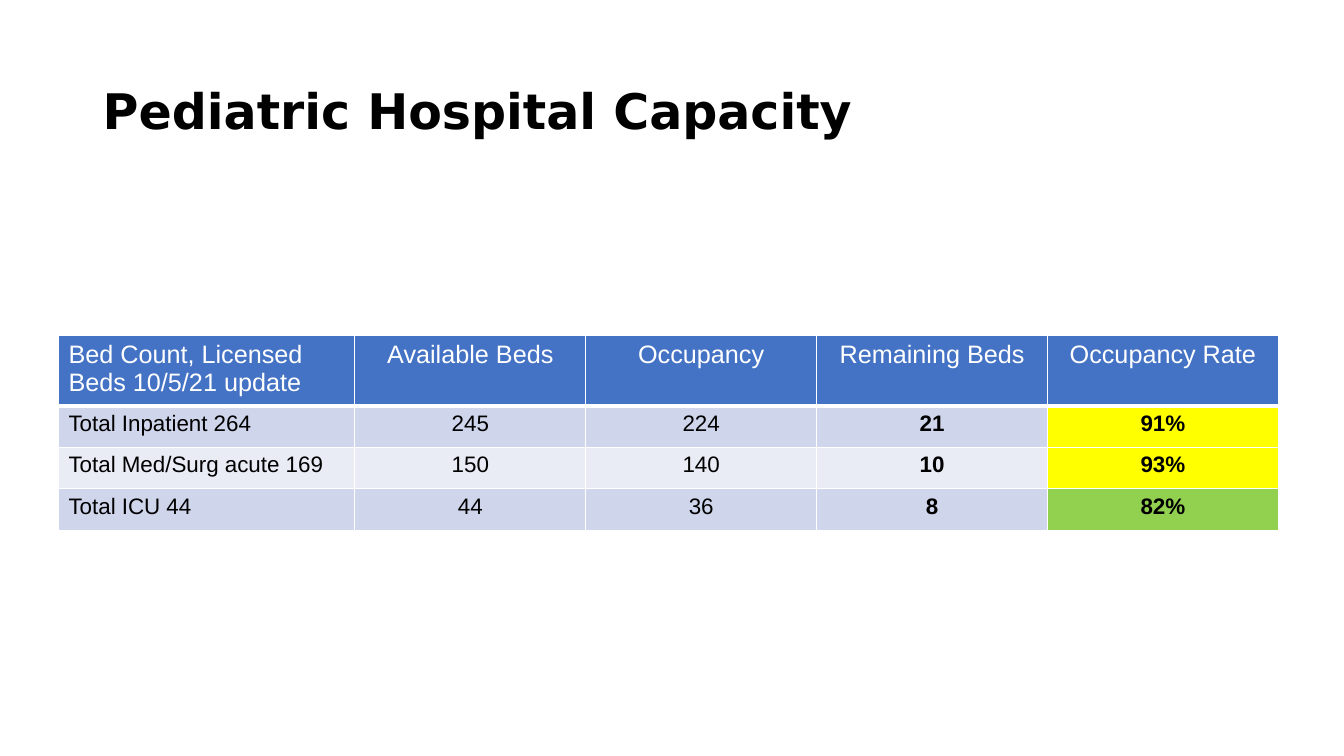
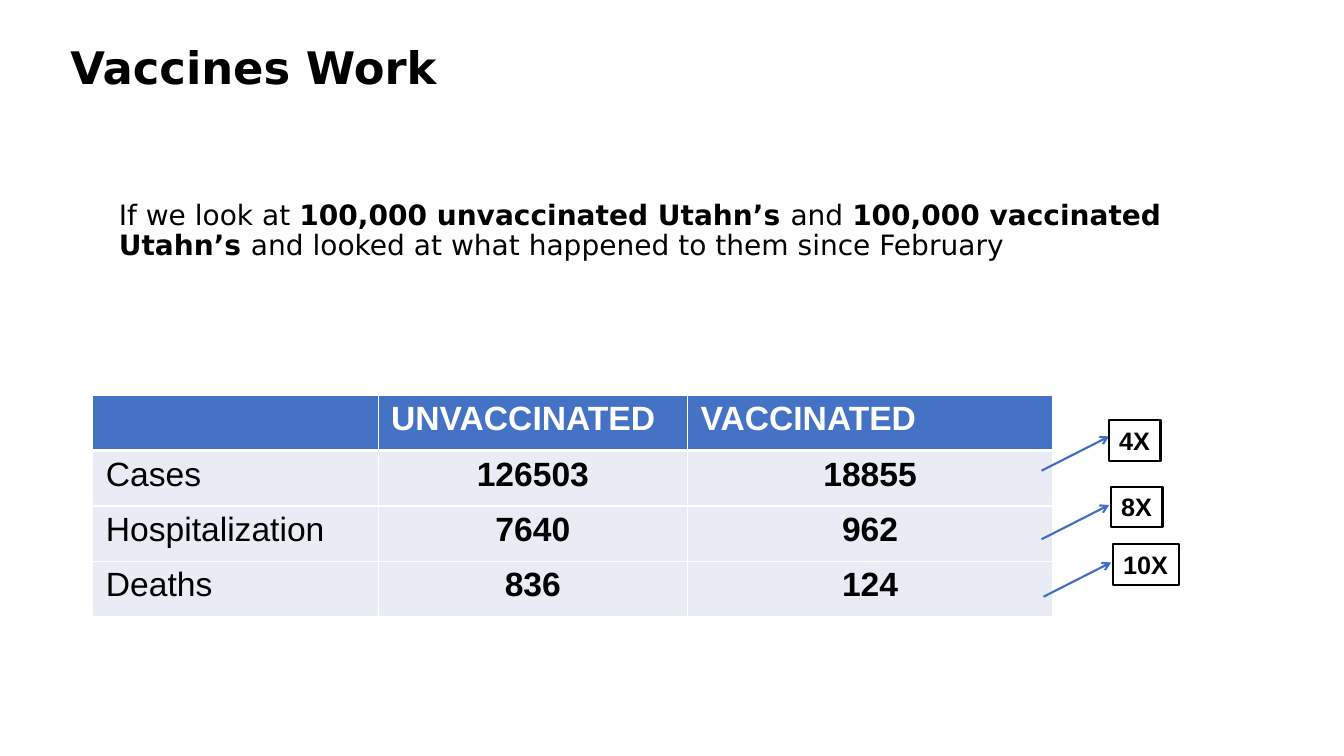
from lxml import etree
from pptx import Presentation
from pptx.dml.color import RGBColor
from pptx.enum import shapes, text
from pptx.oxml import ns
from pptx.util import Inches, Pt

BLACK = RGBColor(0x00, 0x00, 0x00)
WHITE = RGBColor(0xFF, 0xFF, 0xFF)
HEADER_BLUE = RGBColor(0x44, 0x72, 0xC4)
ARROW_BLUE = RGBColor(0x3F, 0x6F, 0xC3)
BAND_DARK = RGBColor(0xCF, 0xD5, 0xEA)
BAND_LIGHT = RGBColor(0xE9, 0xEB, 0xF5)
YELLOW = RGBColor(0xFF, 0xFF, 0x00)
GREEN = RGBColor(0x92, 0xD0, 0x50)


def add_child(parent, tag, **attributes):
    return etree.SubElement(parent, ns.qn(tag), attributes)


class Deck:
    """Holds the shared style and the slide being built."""

    heading_font = "DejaVu Sans"
    body_font = "Arial"

    def __init__(self):
        self.presentation = Presentation()
        self.presentation.slide_width = Inches(13.33)
        self.presentation.slide_height = Inches(7.5)
        self.slide = None

    def new_slide(self):
        blank = self.presentation.slide_layouts[6]
        self.slide = self.presentation.slides.add_slide(blank)

    def add_words(self, paragraph, words, size, font, bold=False, color=BLACK):
        run = paragraph.add_run()
        run.text = words
        run.font.size = Pt(size)
        run.font.name = font
        run.font.bold = bold
        run.font.color.rgb = color

    def prose(self, box, runs, size, anchor=text.MSO_ANCHOR.TOP, before=0):
        """Add a text box from (words, bold) runs."""
        frame = self.slide.shapes.add_textbox(*map(Inches, box)).text_frame
        frame.word_wrap = True
        frame.vertical_anchor = anchor
        paragraph = frame.paragraphs[0]
        paragraph.line_spacing = 0.9
        paragraph.space_before = Pt(before)
        for words, bold in runs:
            self.add_words(paragraph, words, size, self.heading_font, bold)

    def title(self, box, words, size, anchor=text.MSO_ANCHOR.TOP):
        self.prose(box, [(words, True)], size, anchor)

    def borders(self, cell, is_header):
        properties = cell._tc.get_or_add_tcPr()
        for side in "LRTB":
            points = 3 if is_header and side == "B" else 1
            line = add_child(properties, f"a:ln{side}", w=str(Pt(points)))
            fill = add_child(line, "a:solidFill")
            add_child(fill, "a:srgbClr", val=str(WHITE))

    def table(self, origin, widths, heights, rows, style):
        """Add a table; style(row, column) gives size, bold, centred, fill, inset."""
        grid = self.slide.shapes.add_table(
            len(rows), len(widths), *map(Inches, origin),
            Inches(sum(widths)), Inches(sum(heights))).table
        for column, width in zip(grid.columns, widths):
            column.width = Inches(width)
        for row, height in zip(grid.rows, heights):
            row.height = Inches(height)
        for r, values in enumerate(rows):
            for c, value in enumerate(values):
                cell = grid.cell(r, c)
                size, bold, centred, fill, inset = style(r, c)
                cell.margin_left = cell.margin_right = Inches(inset)
                self.borders(cell, r == 0)
                cell.fill.solid()
                cell.fill.fore_color.rgb = fill
                if value:
                    paragraph = cell.text_frame.paragraphs[0]
                    if centred:
                        paragraph.alignment = text.PP_ALIGN.CENTER
                    self.add_words(paragraph, value, size, self.body_font, bold,
                                   BLACK if r else WHITE)

    def arrow(self, start, end):
        connector = self.slide.shapes.add_connector(
            shapes.MSO_CONNECTOR.STRAIGHT, *map(Inches, start + end))
        connector.line.color.rgb = ARROW_BLUE
        connector.line.width = Pt(1.5)
        add_child(connector.get_or_add_ln(), "a:tailEnd", type="arrow")
        add_child(connector._element.spPr, "a:effectLst")

    def label(self, box, words):
        shape = self.slide.shapes.add_shape(
            shapes.MSO_SHAPE.RECTANGLE, *map(Inches, box))
        shape.shadow.inherit = False
        shape.fill.background()
        shape.line.color.rgb = BLACK
        shape.line.width = Pt(1.5)
        frame = shape.text_frame
        frame.word_wrap = False
        frame.auto_size = text.MSO_AUTO_SIZE.SHAPE_TO_FIT_TEXT
        frame.vertical_anchor = text.MSO_ANCHOR.TOP
        frame.paragraphs[0].alignment = text.PP_ALIGN.LEFT
        self.add_words(frame.paragraphs[0], words, 18, self.body_font, True)


def capacity_style(row, column):
    if row == 0:
        return 18, False, column > 0, HEADER_BLUE, 0.1
    fill = BAND_DARK if row % 2 else BAND_LIGHT
    if column == 4:
        fill = GREEN if row == 3 else YELLOW
    return 16, column >= 3, column > 0, fill, 0.1


def vaccine_style(row, column):
    fill = BAND_LIGHT if row else HEADER_BLUE
    return 24, row == 0 or column > 0, row > 0 and column > 0, fill, 0.13


def capacity_slide(deck):
    deck.new_slide()
    deck.title((0.92, 0.4, 11.5, 1.45), "Pediatric Hospital Capacity", 35,
               text.MSO_ANCHOR.MIDDLE)
    deck.table((0.58, 3.33), [2.94] + [2.29] * 4, [0.65] + [0.41] * 3, [
        ("Bed Count, Licensed Beds 10/5/21 update", "Available Beds",
         "Occupancy", "Remaining Beds", "Occupancy Rate"),
        ("Total Inpatient 264", "245", "224", "21", "91%"),
        ("Total Med/Surg acute 169", "150", "140", "10", "93%"),
        ("Total ICU 44", "44", "36", "8", "82%"),
    ], capacity_style)


def vaccine_slide(deck):
    deck.new_slide()
    deck.prose((1.08, 1.95, 11.5, 4.76), [
        ("If we look at ", False),
        ("100,000 unvaccinated Utahn’s ", True),
        ("and ", False),
        ("100,000 vaccinated Utahn’s ", True),
        ("and looked at what happened to them since February", False),
    ], 20, before=10)
    deck.table((0.92, 3.92), [2.83, 3.07, 3.62], [0.55] * 4, [
        ("", "UNVACCINATED", "VACCINATED"),
        ("Cases", "126503", "18855"),
        ("Hospitalization", "7640", "962"),
        ("Deaths", "836", "124"),
    ], vaccine_style)
    deck.title((0.6, 0.41, 9.94, 0.63), "Vaccines Work", 32)
    for ratio, box, (x, y) in [
        ("4X", (11, 4.17, 0.51, 0.4), (10.33, 4.67)),
        ("8X", (11.02, 4.83, 0.51, 0.4), (10.33, 5.35)),
        ("10X", (11.04, 5.4, 0.65, 0.4), (10.35, 5.92)),
    ]:
        deck.arrow((x, y), (x + 0.67, y - 0.34))
        deck.label(box, ratio)


def main():
    deck = Deck()
    capacity_slide(deck)
    vaccine_slide(deck)
    deck.presentation.save("out.pptx")


if __name__ == "__main__":
    main()
